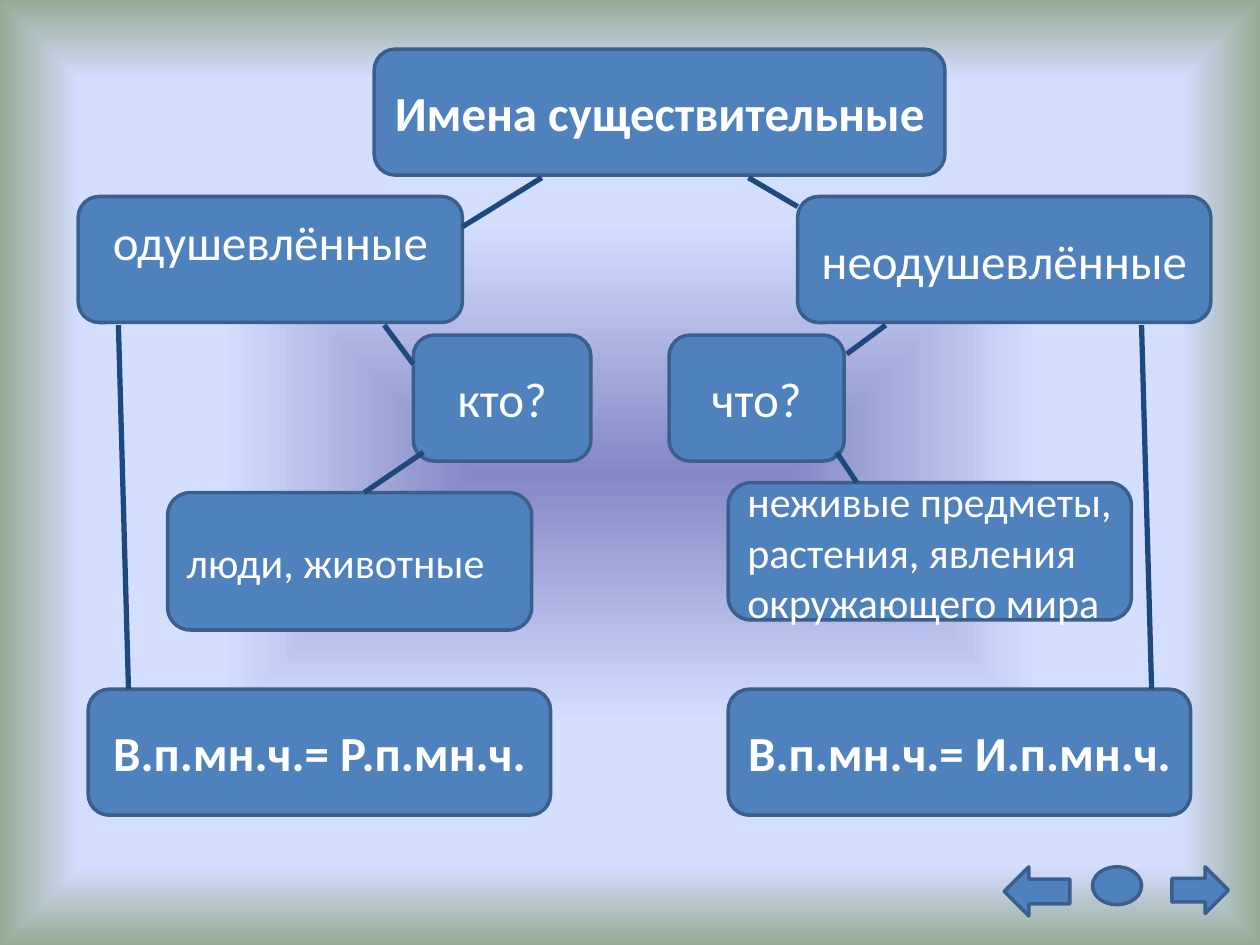
import pptx
import pptx.util
import pptx.oxml
import pptx.oxml.ns
import pptx.dml.color
import pptx.enum.shapes
import pptx.enum.text

Inches = pptx.util.Inches
Pt = pptx.util.Pt
Shapes = pptx.enum.shapes.MSO_SHAPE
Align = pptx.enum.text.PP_ALIGN

COLORS = {"fill": "4F81BD", "outline": "3A5F8C", "link": "1F497D", "text": "FFFFFF"}
BACKGROUND_STOPS = [(0, "8488C4"), (53, "D4DEFF"), (83, "D4DEFF"), (100, "96AB94")]

# Text, (left, top, width, height), text format
BOXES = [
    ("Имена существительные", (2.97, 0.39, 4.53, 1), {"bold": True}),
    ("одушевлённые", (0.62, 1.56, 3.05, 1), {"bottom": 0.35}),
    ("неодушевлённые", (6.33, 1.56, 3.28, 1), {}),
    ("кто?", (3.28, 2.66, 1.41, 1), {}),
    ("неживые предметы, растения, явления окружающего мира",
     (5.78, 3.83, 3.2, 1.09), {"size": 24, "align": Align.LEFT}),
    ("что?", (5.31, 2.66, 1.39, 1), {}),
    ("В.п.мн.ч.= Р.п.мн.ч.", (0.7, 5.47, 3.67, 1), {"bold": True}),
    ("люди, животные", (1.33, 3.91, 2.89, 1.09), {"size": 24, "align": Align.LEFT}),
    ("В.п.мн.ч.= И.п.мн.ч.", (5.78, 5.47, 3.67, 1), {"bold": True}),
]

# Start x, start y, end x, end y
LINKS = [
    (4.3, 1.41, 3.67, 1.8),
    (3.05, 2.58, 3.28, 2.89),
    (7.03, 2.58, 6.72, 2.81),
    (5.94, 1.41, 6.33, 1.64),
    (9.06, 2.58, 9.14, 5.47),
    (0.94, 2.58, 1.02, 5.47),
    (6.64, 3.59, 6.8, 3.83),
    (3.36, 3.59, 2.89, 3.91),
]

# Preset, (left, top, width, height), rotation
BUTTONS = [
    (Shapes.RIGHT_ARROW, (9.3, 6.88, 0.45, 0.37), 0),
    (Shapes.OVAL, (8.67, 6.88, 0.39, 0.3), 0),
    (Shapes.RIGHT_ARROW, (7.97, 6.88, 0.52, 0.39), 180),
]


def rgb(name):
    return pptx.dml.color.RGBColor.from_string(COLORS[name])


def set_background(slide):
    slide.background.fill.gradient()
    gradient = slide.element.xpath(".//a:gradFill")[0]
    stops = "".join(
        f'<a:gs pos="{position * 1000}"><a:srgbClr val="{color}"/></a:gs>'
        for position, color in BACKGROUND_STOPS
    )
    gradient.getparent().replace(gradient, pptx.oxml.parse_xml(
        f'<a:gradFill rotWithShape="1" {pptx.oxml.ns.nsdecls("a")}>'
        f"<a:gsLst>{stops}</a:gsLst>"
        '<a:path path="shape"><a:fillToRect l="50000" t="50000" r="50000" b="50000"/></a:path>'
        "</a:gradFill>"
    ))


def add_shape(slide, preset, place, rotation=0):
    shape = slide.shapes.add_shape(preset, *map(Inches, place))
    shape.rotation = rotation
    shape.shadow.inherit = False
    shape.fill.solid()
    shape.fill.fore_color.rgb = rgb("fill")
    shape.line.color.rgb = rgb("outline")
    shape.line.width = Pt(2)
    return shape


def write_text(shape, text, size=28, bold=False, align=Align.CENTER, bottom=0.05):
    frame = shape.text_frame
    frame.word_wrap = True
    frame.vertical_anchor = pptx.enum.text.MSO_ANCHOR.MIDDLE
    frame.margin_bottom = Inches(bottom)
    paragraph = frame.paragraphs[0]
    paragraph.alignment = align
    run = paragraph.add_run()
    run.text = text
    run.font.name = "Calibri"
    run.font.size = Pt(size)
    run.font.bold = bold
    run.font.color.rgb = rgb("text")


def add_link(slide, ends):
    connector = slide.shapes.add_connector(
        pptx.enum.shapes.MSO_CONNECTOR.STRAIGHT, *map(Inches, ends))
    connector.line.color.rgb = rgb("link")
    connector.line.width = Pt(3)
    connector.element.spPr.append(
        pptx.oxml.parse_xml(f'<a:effectLst {pptx.oxml.ns.nsdecls("a")}/>'))


def main():
    presentation = pptx.Presentation()
    presentation.slide_width = Inches(10)
    presentation.slide_height = Inches(7.5)
    slide = presentation.slides.add_slide(presentation.slide_layouts[6])
    set_background(slide)

    # Word classes, questions and case rules
    for text, place, text_format in BOXES:
        write_text(add_shape(slide, Shapes.ROUNDED_RECTANGLE, place), text, **text_format)

    # Links between the boxes
    for ends in LINKS:
        add_link(slide, ends)

    # Navigation buttons
    for preset, place, rotation in BUTTONS:
        add_shape(slide, preset, place, rotation)

    presentation.save("out.pptx")


if __name__ == "__main__":
    main()
